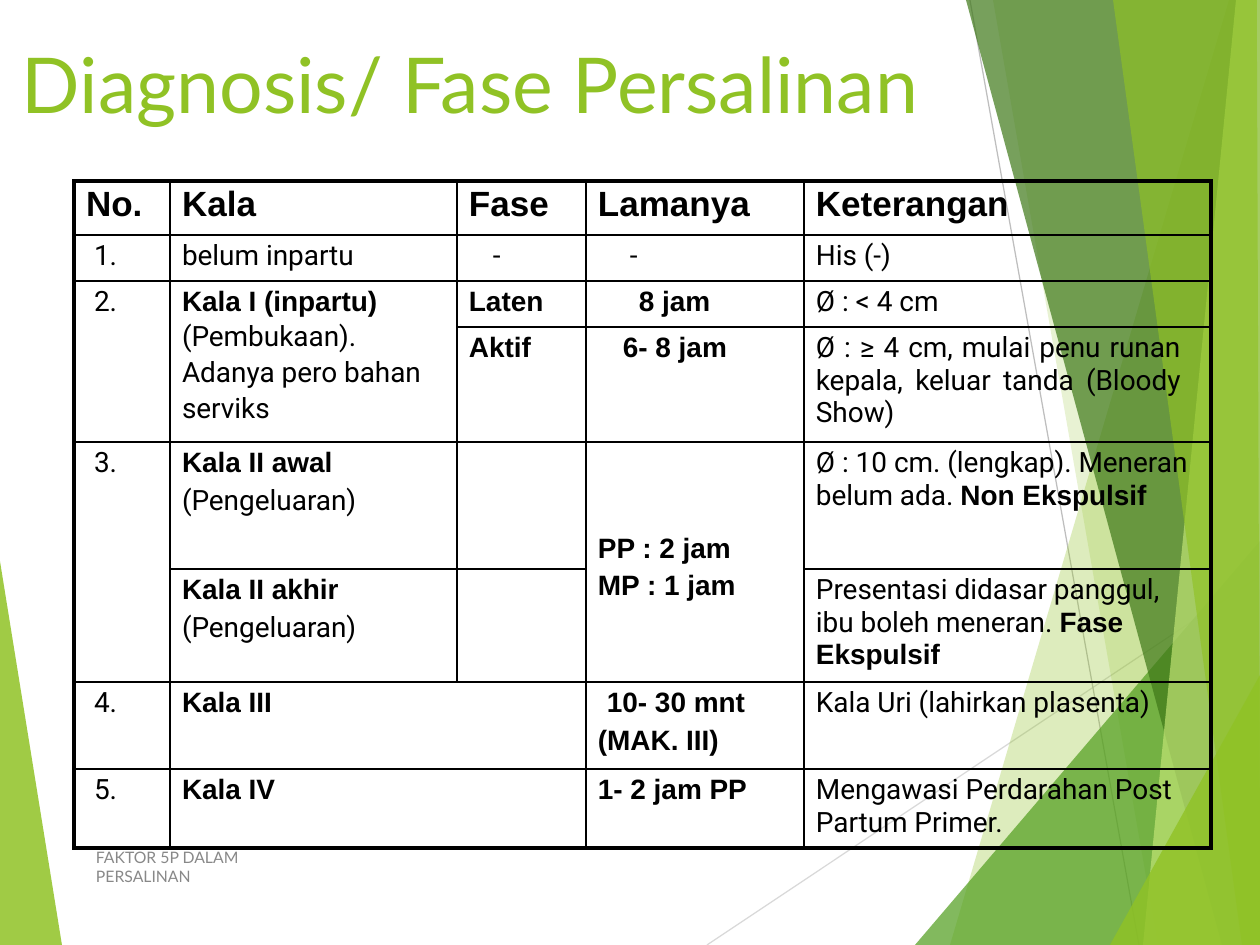
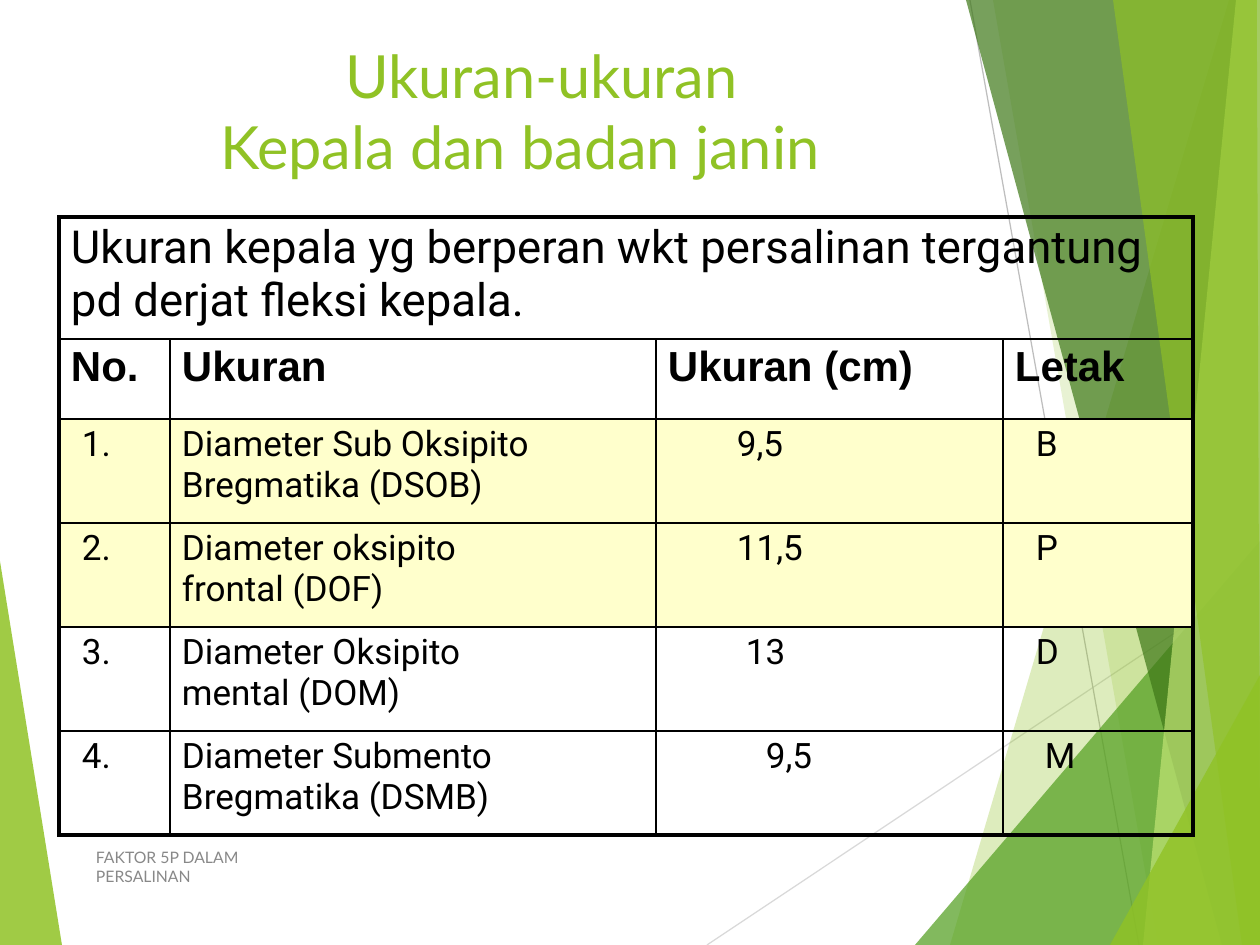
import dataclasses

import lxml.etree
import pptx
import pptx.dml.color
import pptx.enum.shapes
import pptx.enum.text
import pptx.oxml.ns
import pptx.util

SCALE = 914400 / 126  # EMU in one px
WIDTH, HEIGHT = 1260, 945
MIDDLE = pptx.enum.text.MSO_ANCHOR.MIDDLE
TOP = pptx.enum.text.MSO_ANCHOR.TOP
LEFT = pptx.enum.text.PP_ALIGN.LEFT
JUSTIFY = pptx.enum.text.PP_ALIGN.JUSTIFY


@dataclasses.dataclass(frozen=True)
class Theme:
    lime: str = "90C225"
    pale_lime: str = "C0E374"
    green: str = "539F20"
    dark_green: str = "3E7818"
    light_line: str = "D9D9D9"
    gray_line: str = "BEBEBE"
    ink: str = "000000"
    footer: str = "888888"
    highlight: str = "FFFFCC"
    display_face: str = "Lato"
    body_face: str = "Roboto"
    bold_face: str = "Arial"
    big_title: int = 44
    title: int = 34
    lead: int = 26
    table_head: int = 24
    table_text: int = 20
    small_text: int = 16
    footer_size: int = 9
    frame: float = 2.25
    rule: float = 1
    hairline: float = 0.72


THEME = Theme()


@dataclasses.dataclass(frozen=True)
class Note:
    """A cell paragraph; text between asterisks is bold."""
    text: str
    indent: int = 12
    before: float = 3
    spacing: float = 1.0
    align: pptx.enum.text.PP_ALIGN = LEFT


@dataclasses.dataclass(frozen=True)
class Grid:
    columns: list
    rows: list
    sizes: list
    cells: dict
    merges: list
    right_margins: dict = dataclasses.field(default_factory=dict)
    middle: tuple = ()
    highlighted_rows: tuple = ()


def px(length):
    return pptx.util.Emu(round(length * SCALE))


def rgb(color):
    return pptx.dml.color.RGBColor.from_string(color)


def add_xml(parent, tag, **attributes):
    return lxml.etree.SubElement(parent, pptx.oxml.ns.qn(tag), attributes)


def set_font(font, face, size=None, color=None, bold=False):
    font.name, font.bold = face, bold
    if size:
        font.size = pptx.util.Pt(size)
    if color:
        font.color.rgb = rgb(color)


def set_indent(para, left, first=0):
    properties = para._p.get_or_add_pPr()
    properties.set("marL", str(px(left)))
    properties.set("indent", str(px(first)))


def set_frame(frame):
    frame.word_wrap = True
    frame.auto_size = pptx.enum.text.MSO_AUTO_SIZE.NONE
    frame.vertical_anchor = TOP
    frame.margin_left = frame.margin_right = frame.margin_bottom = 0
    frame.margin_top = px(1)


def add_facet(page, points, color, opacity):
    builder = page.shapes.build_freeform(*points[0], scale=SCALE)
    builder.add_line_segments(points[1:], close=True)
    facet = builder.convert_to_shape()
    facet.shadow.inherit = False
    facet.line.fill.background()
    facet.fill.solid()
    facet.fill.fore_color.rgb = rgb(color)
    tint = next(facet.element.spPr.iter(pptx.oxml.ns.qn("a:srgbClr")))
    add_xml(tint, "a:alpha", val=str(opacity * 1000))
    return facet


def add_ray(page, start, end, color):
    ray = page.shapes.add_connector(
        pptx.enum.shapes.MSO_CONNECTOR.STRAIGHT, *map(px, start + end))
    ray.line.color.rgb = rgb(color)
    ray.line.width = pptx.util.Pt(THEME.hairline)
    add_xml(ray.element.spPr, "a:effectLst")
    return ray


def share_backdrop(page):
    """Draw the green facets and move them to the layout that all pages use."""
    right, bottom = WIDTH, HEIGHT
    facets = [
        ([(1229, 0), (950, bottom), (right, bottom), (right, 0)], THEME.lime, 30),
        ([(right, 0), (993, 0), (1158, bottom), (right, bottom)], THEME.lime, 20),
        ([(right, 541), (915, bottom), (right, bottom)], THEME.green, 72),
        ([(right, 0), (966, 0), (1222, bottom), (right, bottom)], THEME.dark_green, 70),
        ([(right, 0), (1236, 0), (1143, bottom), (right, bottom)], THEME.pale_lime, 70),
        ([(1257, 0), (1113, 0), (1242, bottom), (right, bottom), (right, 854),
          (1257, 55)], THEME.lime, 65),
        ([(right, 675), (1110, bottom), (right, bottom)], THEME.lime, 80),
    ]
    parts = [
        add_facet(page, [(0, 561), (0, bottom), (62, bottom)], THEME.lime, 85),
        add_ray(page, (707, bottom), (right, 576), THEME.light_line),
        add_ray(page, (970, 0), (1139, bottom), THEME.gray_line),
    ]
    parts += [add_facet(page, *facet) for facet in facets]
    for part in parts:
        page.slide_layout.shapes.element.append(part.element)


def place_title(page, box, text, size, first_indent=0):
    title = page.shapes.title
    title.left, title.top, title.width, title.height = map(px, box)
    frame = title.text_frame
    set_frame(frame)
    frame.text = text
    para = frame.paragraphs[0]
    para.alignment = LEFT
    para.space_before = pptx.util.Pt(1)
    set_indent(para, 1, first_indent)
    set_font(para.font, THEME.display_face, size, THEME.lime)


def add_footer(page, box):
    frame = page.shapes.add_textbox(*map(px, box)).text_frame
    set_frame(frame)
    frame.text = "FAKTOR 5P DALAM PERSALINAN"
    para = frame.paragraphs[0]
    set_indent(para, 1)
    set_font(para.font, THEME.display_face, THEME.footer_size, THEME.footer)


def write_note(para, note, size):
    para.alignment = note.align
    para.line_spacing = note.spacing
    para.space_before = pptx.util.Pt(note.before)
    set_indent(para, note.indent)
    spans = [(text, bool(index % 2))
             for index, text in enumerate(note.text.split("*")) if text]
    for text, bold in spans:
        span = para.add_run()
        span.text = text
        face = THEME.bold_face if bold else THEME.body_face
        if len(spans) > 1:
            set_font(span.font, face, bold=bold)
        set_font(para.font, face, size, THEME.ink, bold)


def set_borders(cell, outer):
    properties = cell._tc.get_or_add_tcPr()
    for side in "LRTB":
        points = THEME.frame if side in outer else THEME.rule
        line = add_xml(properties, f"a:ln{side}", w=str(pptx.util.Pt(points)))
        add_xml(add_xml(line, "a:solidFill"), "a:srgbClr", val=THEME.ink)


def outer_sides(cell, row, column, grid):
    """Name the sides of a cell, spans included, that lie on the table's frame."""
    last_row, last_column = row, column
    if cell.is_merge_origin:
        last_row += cell.span_height - 1
        last_column += cell.span_width - 1
    on_frame = {"L": column == 0, "T": row == 0,
                "R": last_column == len(grid.columns) - 1,
                "B": last_row == len(grid.rows) - 1}
    return [side for side, outer in on_frame.items() if outer]


def fill_cell(cell, place, grid):
    row, column = place
    cell.margin_left = cell.margin_bottom = 0
    cell.margin_right = px(grid.right_margins.get(place, 0))
    cell.margin_top = px(4 if row == 0 else 5)
    cell.vertical_anchor = MIDDLE if place in grid.middle else TOP
    set_borders(cell, outer_sides(cell, row, column, grid))
    if row in grid.highlighted_rows:
        cell.fill.solid()
        cell.fill.fore_color.rgb = rgb(THEME.highlight)
    else:
        cell.fill.background()
    frame = cell.text_frame
    for index, note in enumerate(grid.cells.get(place, [])):
        para = frame.add_paragraph() if index else frame.paragraphs[0]
        write_note(para, note, grid.sizes[row])


def add_grid(page, left, top, grid):
    table = page.shapes.add_table(
        len(grid.rows), len(grid.columns), px(left), px(top),
        px(sum(grid.columns)), px(sum(grid.rows))).table
    table.first_row = table.horz_banding = False
    for column, width in zip(table.columns, grid.columns):
        column.width = px(width)
    for row, height in zip(table.rows, grid.rows):
        row.height = px(height)
    for first, last in grid.merges:
        table.cell(*first).merge(table.cell(*last))
    for row in range(len(grid.rows)):
        for column in range(len(grid.columns)):
            fill_cell(table.cell(row, column), (row, column), grid)


def head_cells(row, labels):
    return {(row, column): [Note(f"*{label}*")] for column, label in enumerate(labels)}


def number_cells(rows, indent):
    return {(row, 0): [Note(f"{number}.", indent)]
            for number, row in enumerate(rows, start=1)}


def phases_grid():
    release = Note("(Pengeluaran)", before=4)
    cells = head_cells(0, ["No.", "Kala", "Fase", "Lamanya", "Keterangan"])
    cells |= number_cells([1, 2, 4, 6, 7], 20)
    cells |= {
        (1, 1): [Note("belum inpartu")],
        (1, 2): [Note("-", 36)],
        (1, 3): [Note("-", 44)],
        (1, 4): [Note("His (-)")],
        (2, 1): [Note("*Kala I (inpartu)*"),
                 Note("(Pembukaan). Adanya pero bahan serviks", before=0.4, spacing=1.1)],
        (2, 2): [Note("*Laten*")],
        (2, 3): [Note("*8 jam*", 53)],
        (2, 4): [Note("Ø : < 4 cm")],
        (3, 2): [Note("*Aktif*")],
        (3, 3): [Note("*6- 8 jam*", 37)],
        (3, 4): [Note("Ø : ≥ 4 cm, mulai penu runan kepala, keluar tanda (Bloody Show)",
                      align=JUSTIFY)],
        (4, 1): [Note("*Kala II awal*"), release],
        (4, 3): [Note("*PP : 2 jam*", spacing=1.2),
                 Note("*MP : 1 jam*", before=0, spacing=1.2)],
        (4, 4): [Note("Ø : 10 cm. (lengkap). Meneran"),
                 Note("belum ada. *Non Ekspulsif*", before=0)],
        (5, 1): [Note("*Kala II akhir*"), release],
        (5, 4): [Note("Presentasi didasar panggul, ibu boleh meneran. *Fase Ekspulsif*")],
        (6, 1): [Note("*Kala III*")],
        (6, 3): [Note("*10- 30 mnt*", 21), Note("*(MAK. III)*", before=4)],
        (6, 4): [Note("Kala Uri (lahirkan plasenta)")],
        (7, 1): [Note("*Kala IV*")],
        (7, 3): [Note("*1- 2 jam PP*")],
        (7, 4): [Note("Mengawasi Perdarahan Post Partum Primer.")],
    }
    return Grid(
        columns=[96, 287, 129, 218, 407], rows=[54, 46, 46, 115, 127, 113, 87, 79],
        sizes=[THEME.table_text] + [THEME.small_text] * 7, cells=cells,
        merges=[((2, 0), (3, 0)), ((2, 1), (3, 1)), ((4, 0), (5, 0)),
                ((4, 3), (5, 3)), ((6, 1), (6, 2)), ((7, 1), (7, 2))],
        right_margins={(2, 1): 30, (3, 4): 30, (5, 4): 30}, middle=((4, 3),))


def diameters_grid():
    measures = [
        ([Note("Diameter Sub Oksipito"), Note("Bregmatika (DSOB)", before=0)],
         Note("9,5", 81), Note("B", 33)),
        ([Note("Diameter oksipito frontal (DOF)")], Note("11,5", 81), Note("P", 33)),
        ([Note("Diameter Oksipito mental (DOM)")], Note("13", 90), Note("D", 33)),
        ([Note("Diameter Submento Bregmatika (DSMB)")], Note("9,5", 110), Note("M", 42)),
    ]
    cells = {(0, 0): [Note("Ukuran kepala yg berperan wkt persalinan tergantung "
                           "pd derjat fleksi kepala.")]}
    cells |= head_cells(1, ["No.", "Ukuran", "Ukuran (cm)", "Letak"])
    cells |= number_cells(range(2, 6), 23)
    for row, (names, length, position) in enumerate(measures, start=2):
        cells |= {(row, 1): names, (row, 2): [length], (row, 3): [position]}
    return Grid(
        columns=[111, 486, 347, 190], rows=[122, 80] + [104] * 4,
        sizes=[THEME.lead, THEME.table_head] + [THEME.table_text] * 4, cells=cells,
        merges=[((0, 0), (0, 3))],
        right_margins={(row, 1): 120 for row in range(2, 6)}, highlighted_rows=(2, 3))


def main():
    deck = pptx.Presentation()
    deck.slide_width, deck.slide_height = px(WIDTH), px(HEIGHT)
    title_only = deck.slide_layouts[5]
    phases, diameters = [deck.slides.add_slide(title_only) for _ in range(2)]
    share_backdrop(phases)

    place_title(phases, (21, 35, 1218, 96), "Diagnosis/ Fase Persalinan", THEME.big_title)
    add_grid(phases, 74, 181, phases_grid())

    place_title(diameters, (219, 38, 625, 146), "Ukuran-ukuran Kepala dan badan janin",
                THEME.title, first_indent=125)
    add_grid(diameters, 59, 217, diameters_grid())

    for page in (phases, diameters):
        add_footer(page, (95, 847, 223, 23))
    deck.save("out.pptx")


if __name__ == "__main__":
    main()
